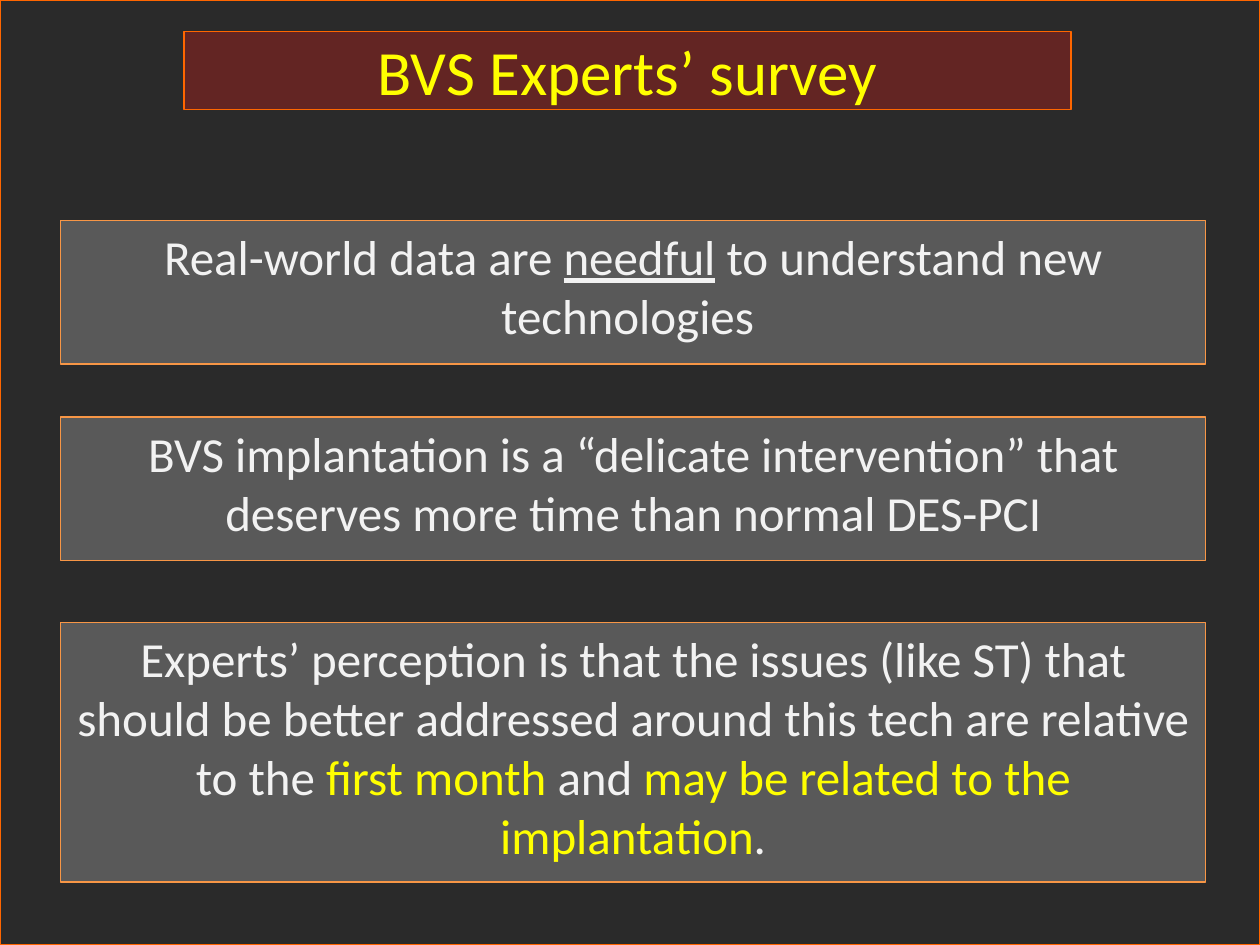
"""Build the slide that sums up the BVS experts' survey."""
from lxml import etree
from pptx import Presentation, util as u
from pptx.dml.color import RGBColor
from pptx.enum import shapes, text
from pptx.oxml.ns import qn

WIDE, HIGH = 10, 7.5
LIGHT, GLOW = "F2F2F2", "FFFF00"


def paint(part, tone):
    part.solid()
    part.fore_color.rgb = RGBColor.from_string(tone)


def panel(left, top, wide, high, fill, edge):
    box = page.shapes.add_shape(
        shapes.MSO_SHAPE.RECTANGLE, *map(u.Inches, (left, top, wide, high)))
    box.shadow.inherit = False
    paint(box.fill, fill)
    paint(box.line.fill, edge)
    box.line.width = u.Pt(0.75)
    frame = box.text_frame
    frame.word_wrap = True
    frame.vertical_anchor = text.MSO_ANCHOR.TOP
    para = frame.paragraphs[0]
    para.alignment = text.PP_ALIGN.CENTER
    para.font.name = "Calibri"
    return box, para


deck = Presentation()
deck.slide_width, deck.slide_height = u.Inches(WIDE), u.Inches(HIGH)
page = deck.slides.add_slide(deck.slide_layouts[6])
paint(page.background.fill, "404040")

veil, _ = panel(0, 0, WIDE, HIGH, "262626", "FF6600")
tint = veil.fill._xPr.find(qn("a:solidFill"))[0]
etree.SubElement(tint, qn("a:alpha")).set("val", "81000")

title, para = panel(1.46, 0.25, 7.04, 0.62, "632523", "FF6600")
frame = title.text_frame
frame.margin_left = frame.margin_right = u.Inches(0.02)
frame.margin_top = frame.margin_bottom = u.Inches(0.01)
frame.auto_size = text.MSO_AUTO_SIZE.SHAPE_TO_FIT_TEXT
para.font.size = u.Pt(36)
paint(para.font.fill, GLOW)
para.add_run().text = "BVS Experts’ survey"

points = [
    (1.75, 1.14, [("Real-world data are ", LIGHT, False),
                  ("needful", LIGHT, True),
                  (" to understand new technologies ", LIGHT, False)]),
    (3.31, 1.14, [("BVS implantation is a “delicate intervention” that "
                   "deserves more time than normal DES-PCI", LIGHT, False)]),
    (4.94, 2.06, [("Experts’ perception is that the issues (like ST) that "
                   "should be better addressed around this tech are relative "
                   "to the ", LIGHT, False),
                  ("first month ", GLOW, False),
                  ("and ", LIGHT, False),
                  ("may be related to the implantation", GLOW, False),
                  (".", LIGHT, False)]),
]
for top, high, parts in points:
    _, para = panel(0.48, top, 9.09, high, "595959", "F79646")
    para.font.size = u.Pt(28)
    for words, tone, under in parts:
        run = para.add_run()
        run.text = words
        paint(run.font.fill, tone)
        if under:
            run.font.underline = True

deck.save("out.pptx")
